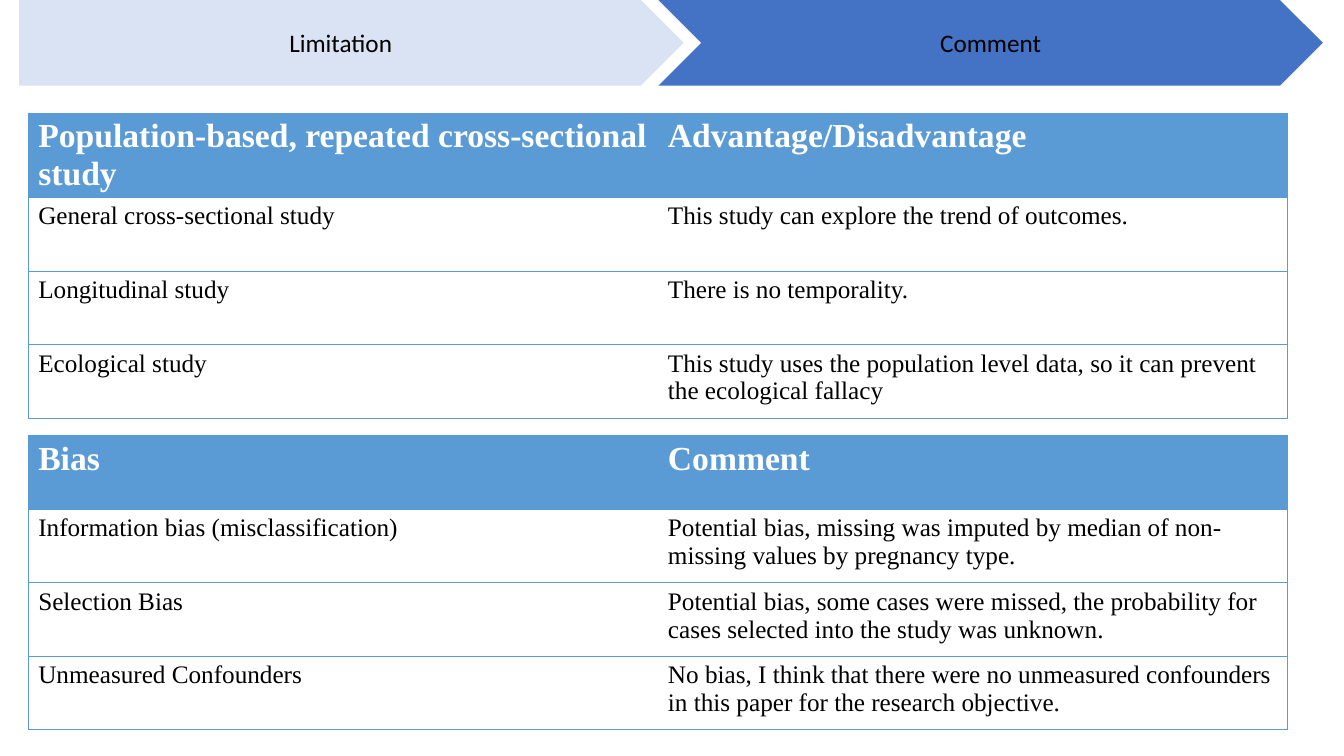
from dataclasses import dataclass

from lxml import etree
from pptx import Presentation
from pptx.dml.color import RGBColor
from pptx.enum import shapes, text
from pptx.oxml import ns
from pptx.util import Inches, Pt

BLACK = RGBColor(0x00, 0x00, 0x00)
WHITE = RGBColor(0xFF, 0xFF, 0xFF)
PALE_BLUE = RGBColor(0xDA, 0xE3, 0xF3)
DEEP_BLUE = RGBColor(0x44, 0x72, 0xC4)
TABLE_BLUE = RGBColor(0x5B, 0x9B, 0xD5)

BANNER_WIDTH, BANNER_HEIGHT = 6.59, 0.85
TABLE_LEFT, COLUMN_WIDTH, ROW_HEIGHT = 0.28, 6.245, 0.73


@dataclass(frozen=True)
class Banner:
    label: str
    left: float
    outline: shapes.MSO_SHAPE
    fill: RGBColor


@dataclass(frozen=True)
class Grid:
    top: float
    rows: tuple[tuple[str, str], ...]


BANNERS = (
    Banner("Limitation", 0.19, shapes.MSO_SHAPE.PENTAGON, PALE_BLUE),
    Banner("Comment", 6.53, shapes.MSO_SHAPE.CHEVRON, DEEP_BLUE),
)

GRIDS = (
    Grid(1.12, (
        ("Population-based, repeated cross-sectional study", "Advantage/Disadvantage"),
        ("General cross-sectional study", "This study can explore the trend of outcomes."),
        ("Longitudinal study", "There is no temporality."),
        ("Ecological study",
         "This study uses the population level data, so it can prevent the ecological fallacy"),
    )),
    Grid(4.32, (
        ("Bias", "Comment"),
        ("Information bias (misclassification)",
         "Potential bias, missing was imputed by median of non-missing values by pregnancy type."),
        ("Selection Bias",
         "Potential bias, some cases were missed, the probability for cases selected into "
         "the study was unknown."),
        ("Unmeasured Confounders",
         "No bias, I think that there were no unmeasured confounders in this paper for "
         "the research objective."),
    )),
)


def write(frame, words: str, *, font: str, size: float = 18, color: RGBColor = BLACK,
          bold: bool = False, align=text.PP_ALIGN.LEFT) -> None:
    para = frame.paragraphs[0]
    para.alignment = align
    span = para.add_run()
    span.text = words
    span.font.name = font
    span.font.size = Pt(size)
    span.font.bold = bold
    span.font.color.rgb = color


def set_borders(cell, visible: str) -> None:
    properties = cell._tc.get_or_add_tcPr()
    for position, side in enumerate("LRTB"):
        line = etree.Element(ns.qn(f"a:ln{side}"), w=str(Pt(0.5)))
        if side in visible:
            fill = etree.SubElement(line, ns.qn("a:solidFill"))
            etree.SubElement(fill, ns.qn("a:srgbClr"), val=str(TABLE_BLUE))
        else:
            etree.SubElement(line, ns.qn("a:noFill"))
        properties.insert(position, line)


def draw_banner(page, banner: Banner) -> None:
    box = page.shapes.add_shape(banner.outline, Inches(banner.left), Inches(0),
                                Inches(BANNER_WIDTH), Inches(BANNER_HEIGHT))
    box.shadow.inherit = False
    box.fill.solid()
    box.fill.fore_color.rgb = banner.fill
    box.line.fill.background()
    box.text_frame.word_wrap = True
    box.text_frame.vertical_anchor = text.MSO_ANCHOR.MIDDLE
    write(box.text_frame, banner.label, font="Calibri", align=text.PP_ALIGN.CENTER)


def draw_grid(page, grid: Grid) -> None:
    table = page.shapes.add_table(
        len(grid.rows), 2, Inches(TABLE_LEFT), Inches(grid.top),
        Inches(2 * COLUMN_WIDTH), Inches(len(grid.rows) * ROW_HEIGHT)).table
    table.horz_banding = False
    for row_index, row in enumerate(grid.rows):
        header = row_index == 0
        for column_index, words in enumerate(row):
            cell = table.cell(row_index, column_index)
            cell.fill.solid()
            cell.fill.fore_color.rgb = TABLE_BLUE if header else WHITE
            set_borders(cell, "LTB" if column_index == 0 else "RTB")
            write(cell.text_frame, words, font="Times New Roman", bold=header,
                  size=24 if header else 18, color=WHITE if header else BLACK)


def main() -> None:
    deck = Presentation()
    deck.slide_width, deck.slide_height = Inches(13.33), Inches(7.5)
    page = deck.slides.add_slide(deck.slide_layouts[6])
    for banner in BANNERS:
        draw_banner(page, banner)
    for grid in GRIDS:
        draw_grid(page, grid)
    deck.save("out.pptx")


if __name__ == "__main__":
    main()
